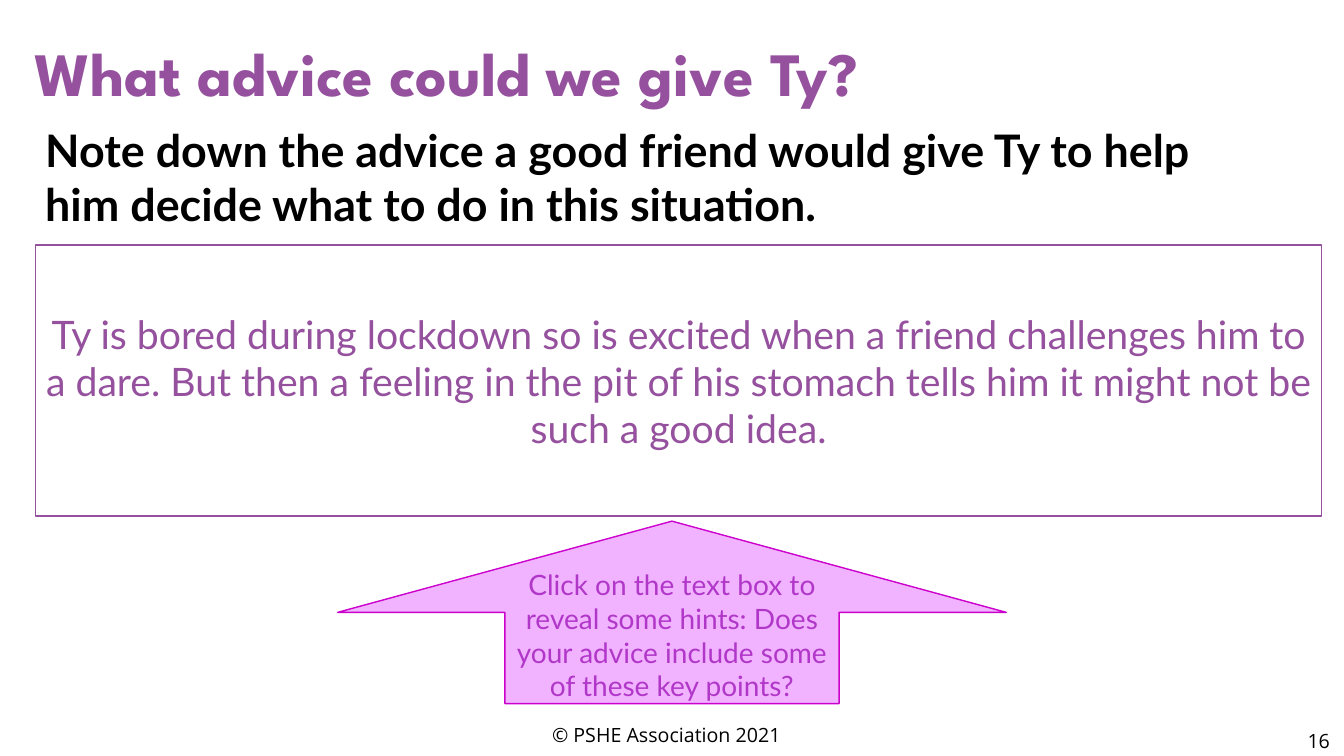
from dataclasses import dataclass

from pptx import Presentation
from pptx.dml.color import RGBColor
from pptx.enum.shapes import MSO_SHAPE as SHAPE
from pptx.enum.text import MSO_ANCHOR as ANCHOR, MSO_AUTO_SIZE as AUTO, PP_ALIGN as ALIGN
from pptx.util import Emu, Pt

PX = 9144
PURPLE, BLACK = "95519E", "000000"


@dataclass(frozen=True)
class Box:
    x: int
    y: int
    w: int
    h: int


@dataclass(frozen=True)
class Words:
    text: str
    font: str
    size: int
    colour: str
    bold: bool = False
    align: ALIGN = ALIGN.LEFT
    anchor: ANCHOR = ANCHOR.TOP


@dataclass(frozen=True)
class Panel:
    kind: SHAPE
    box: Box
    fill: str
    line: str
    words: Words


TITLE_BOX = Box(24, 30, 1167, 84)
TITLE = Words("What advice could we give Ty?", "League Spartan", 44, PURPLE, True)

LABELS = [
    (Box(1287, 718, 46, 40), Words("16", "Open Sans", 14, BLACK)),
    (Box(35, 117, 1178, 118), Words(
        "Note down the advice a good friend would give Ty to help him decide "
        "what to do in this situation.", "Lato", 32, BLACK, True)),
    (Box(0, 709, 1322, 40), Words(
        "© PSHE Association 2021", "Open Sans", 14, BLACK,
        align=ALIGN.CENTER, anchor=ANCHOR.MIDDLE)),
]

PANELS = [
    Panel(SHAPE.RECTANGLE, Box(35, 243, 1276, 269), "FFFFFF", PURPLE, Words(
        "Ty is bored during lockdown so is excited when a friend challenges him "
        "to a dare. But then a feeling in the pit of his stomach tells him it "
        "might not be such a good idea.", "Lato", 28, PURPLE,
        align=ALIGN.CENTER, anchor=ANCHOR.MIDDLE)),
    Panel(SHAPE.UP_ARROW, Box(335, 517, 663, 181), "F1B3FF", "CC00CC", Words(
        "Click on the text box to reveal some hints: Does your advice include "
        "some of these key points?", "Lato", 20, "B137C9",
        align=ALIGN.CENTER, anchor=ANCHOR.MIDDLE)),
]


def px(n: int) -> Emu:
    return Emu(n * PX)


def rgb(colour: str) -> RGBColor:
    return RGBColor.from_string(colour)


def frame(box: Box) -> tuple[Emu, Emu, Emu, Emu]:
    return px(box.x), px(box.y), px(box.w), px(box.h)


def write(sp, words: Words) -> None:
    tf = sp.text_frame
    tf.word_wrap = True
    tf.auto_size = AUTO.NONE
    tf.vertical_anchor = words.anchor
    p = tf.paragraphs[0]
    p.alignment = words.align
    r = p.add_run()
    r.text = words.text
    r.font.name = words.font
    r.font.size = Pt(words.size)
    r.font.bold = words.bold
    r.font.color.rgb = rgb(words.colour)


def add_title(s, box: Box, words: Words) -> None:
    sp = s.shapes.title
    sp.left, sp.top, sp.width, sp.height = frame(box)
    write(sp, words)


def add_label(s, box: Box, words: Words) -> None:
    write(s.shapes.add_textbox(*frame(box)), words)


def add_panel(s, panel: Panel) -> None:
    sp = s.shapes.add_shape(panel.kind, *frame(panel.box))
    sp.shadow.inherit = False
    sp.fill.solid()
    sp.fill.fore_color.rgb = rgb(panel.fill)
    sp.line.color.rgb = rgb(panel.line)
    sp.line.width = Pt(1)
    write(sp, panel.words)


def main() -> None:
    prs = Presentation()
    prs.slide_width, prs.slide_height = px(1333), px(750)
    s = prs.slides.add_slide(prs.slide_layouts[5])
    add_title(s, TITLE_BOX, TITLE)
    for box, words in LABELS:
        add_label(s, box, words)
    for panel in PANELS:
        add_panel(s, panel)
    prs.save("out.pptx")


if __name__ == "__main__":
    main()
